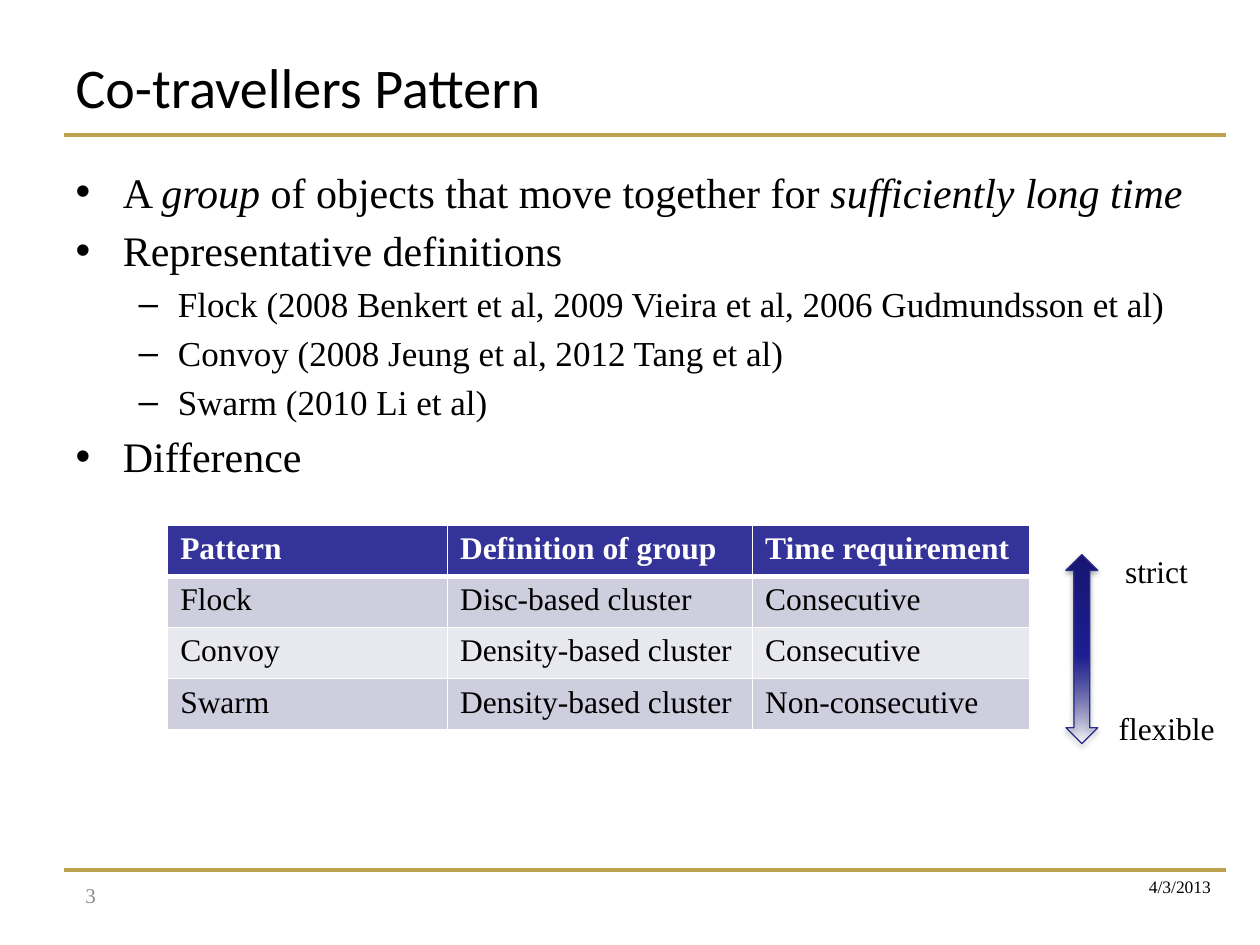
import pptx
import pptx.util
import pptx.dml.color
import pptx.enum.shapes
import pptx.enum.text
import pptx.oxml
import pptx.oxml.ns

Cm = pptx.util.Cm
Pt = pptx.util.Pt
RGB = pptx.dml.color.RGBColor
Align = pptx.enum.text.PP_ALIGN
Anchor = pptx.enum.text.MSO_ANCHOR

BLACK = RGB(0x00, 0x00, 0x00)
WHITE = RGB(0xFF, 0xFF, 0xFF)
GRAY = RGB(0x8C, 0x8C, 0x8C)
GOLD = RGB(0xBD, 0xA1, 0x4E)
NAVY = RGB(0x33, 0x33, 0x99)
EDGE = RGB(0x2A, 0x2A, 0x89)
BANDS = [RGB(0xCE, 0xCE, 0xDE), RGB(0xE8, 0xE8, 0xEF)]
SERIF = "Times New Roman"
A_NS = pptx.oxml.ns.nsdecls("a")

# Level and runs of each list item; a run is (text, italic)
ITEMS = [
    (0, [("A ", False), ("group", True),
         (" of objects that move together for ", False),
         ("sufficiently long time", True)]),
    (0, [("Representative definitions", False)]),
    (1, [("Flock (2008 Benkert et al, 2009 Vieira et al, "
          "2006 Gudmundsson et al)", False)]),
    (1, [("Convoy (2008 Jeung et al, 2012 Tang et al)", False)]),
    (1, [("Swarm (2010 Li et al)", False)]),
    (0, [("Difference", False)]),
]
ROWS = [
    ["Pattern", "Definition of group", "Time requirement"],
    ["Flock", "Disc-based cluster", "Consecutive"],
    ["Convoy", "Density-based cluster", "Consecutive"],
    ["Swarm", "Density-based cluster", "Non-consecutive"],
]


def put_text(para, text, size=18, face=SERIF, color=BLACK,
             bold=False, italic=False):
    run = para.add_run()
    run.text = text
    font = run.font
    font.name, font.size = face, Pt(size)
    font.bold, font.italic = bold, italic
    font.color.rgb = color


def place(shape, left, top, width, height):
    shape.left, shape.top = Cm(left), Cm(top)
    shape.width, shape.height = Cm(width), Cm(height)


def add_title(slide, text):
    title = slide.shapes.title
    place(title, 1.27, 0.76, 18.64, 1.96)
    title.text_frame.vertical_anchor = Anchor.MIDDLE
    para = title.text_frame.paragraphs[0]
    para.alignment = Align.LEFT
    put_text(para, text, size=32, face="Calibri")


def add_list(slide, items):
    # Bullets, indents and spacing come from the template
    body = slide.placeholders[1]
    place(body, 1.27, 3.12, 23.44, 13.9)
    frame = body.text_frame
    frame.margin_top = Cm(0.23)
    for i, (level, runs) in enumerate(items):
        para = frame.add_paragraph() if i else frame.paragraphs[0]
        para.level = level
        if i == 0:
            para.space_before = Pt(0)
        for text, italic in runs:
            put_text(para, text, size=20 if level else 24, italic=italic)


def add_rule(slide, y):
    rule = slide.shapes.add_connector(
        pptx.enum.shapes.MSO_CONNECTOR.STRAIGHT,
        Cm(1.3), Cm(y), Cm(24.71), Cm(y))
    rule.line.color.rgb = GOLD
    rule.line.width = Pt(2.25)
    rule._element.spPr.append(
        pptx.oxml.parse_xml(f"<a:effectLst {A_NS}/>"))


def add_label(slide, text, box, wrap=False, align=Align.LEFT,
              anchor=Anchor.TOP, **style):
    label = slide.shapes.add_textbox(*map(Cm, box))
    frame = label.text_frame
    frame.word_wrap = wrap
    frame.vertical_anchor = anchor
    frame.paragraphs[0].alignment = align
    put_text(frame.paragraphs[0], text, **style)


def set_edges(cell, widths):
    props = cell._tc.get_or_add_tcPr()
    for i, (side, width) in enumerate(widths.items()):
        props.insert(i, pptx.oxml.parse_xml(
            f'<a:ln{side} {A_NS} w="{Pt(width)}"><a:solidFill>'
            f'<a:srgbClr val="{WHITE}"/></a:solidFill></a:ln{side}>'))


def add_grid(slide, rows):
    widths = [5.64, 6.15, 5.59]
    grid = slide.shapes.add_table(
        len(rows), len(widths), Cm(3.38), Cm(10.59),
        Cm(sum(widths)), Cm(1.03 * len(rows))).table
    for col, width in zip(grid.columns, widths):
        col.width = Cm(width)
    for r, row in enumerate(rows):
        head = r == 0
        for c, text in enumerate(row):
            cell = grid.cell(r, c)
            cell.fill.solid()
            cell.fill.fore_color.rgb = NAVY if head else BANDS[(r - 1) % 2]
            put_text(cell.text_frame.paragraphs[0], text, bold=head,
                     color=WHITE if head else BLACK)
            set_edges(cell, {"L": 1, "R": 1, "T": 3 if r == 1 else 1,
                             "B": 3 if head else 1})


def add_arrow(slide):
    arrow = slide.shapes.add_shape(
        pptx.enum.shapes.MSO_SHAPE.UP_DOWN_ARROW,
        Cm(21.49), Cm(11.18), Cm(0.64), Cm(3.81))
    arrow.line.color.rgb = EDGE
    arrow.line.width = Pt(0.75)
    # Fade to clear at the foot, with a soft shadow below
    props = arrow._element.spPr
    fade = pptx.oxml.parse_xml(
        f'<a:gradFill {A_NS} rotWithShape="1"><a:gsLst>'
        '<a:gs pos="0"><a:srgbClr val="171771"/></a:gs>'
        '<a:gs pos="53000"><a:srgbClr val="1E1E93"/></a:gs>'
        '<a:gs pos="100000"><a:srgbClr val="1C1C96">'
        '<a:alpha val="0"/></a:srgbClr></a:gs>'
        '</a:gsLst><a:lin ang="5400000" scaled="0"/></a:gradFill>')
    props.find(pptx.oxml.ns.qn("a:ln")).addprevious(fade)
    props.append(pptx.oxml.parse_xml(
        f'<a:effectLst {A_NS}><a:outerShdw blurRad="{Pt(3.1)}" '
        f'dist="{Pt(1.8)}" dir="5400000" rotWithShape="0">'
        '<a:srgbClr val="000000"><a:alpha val="35000"/></a:srgbClr>'
        '</a:outerShdw></a:effectLst>'))


def main():
    deck = pptx.Presentation()
    deck.slide_width, deck.slide_height = Cm(25.4), Cm(19.05)
    slide = deck.slides.add_slide(deck.slide_layouts[1])

    # Rules under the title and above the footer
    for y in (2.72, 17.53):
        add_rule(slide, y)

    # Title and list
    add_title(slide, "Co-travellers Pattern")
    add_list(slide, ITEMS)

    # Table with its scale
    add_grid(slide, ROWS)
    add_arrow(slide)
    add_label(slide, "strict", (22.43, 11, 1.8, 1.02))
    add_label(slide, "flexible", (22.3, 14.17, 2.46, 1.02))

    # Footer
    add_label(slide, "4/3/2013", (19.38, 17.53, 5.28, 0.66),
              wrap=True, align=Align.RIGHT, size=10)
    add_label(slide, "3", (1.47, 17.53, 3.61, 1.02), wrap=True,
              anchor=Anchor.MIDDLE, size=12, color=GRAY)

    deck.save("out.pptx")


if __name__ == "__main__":
    main()
